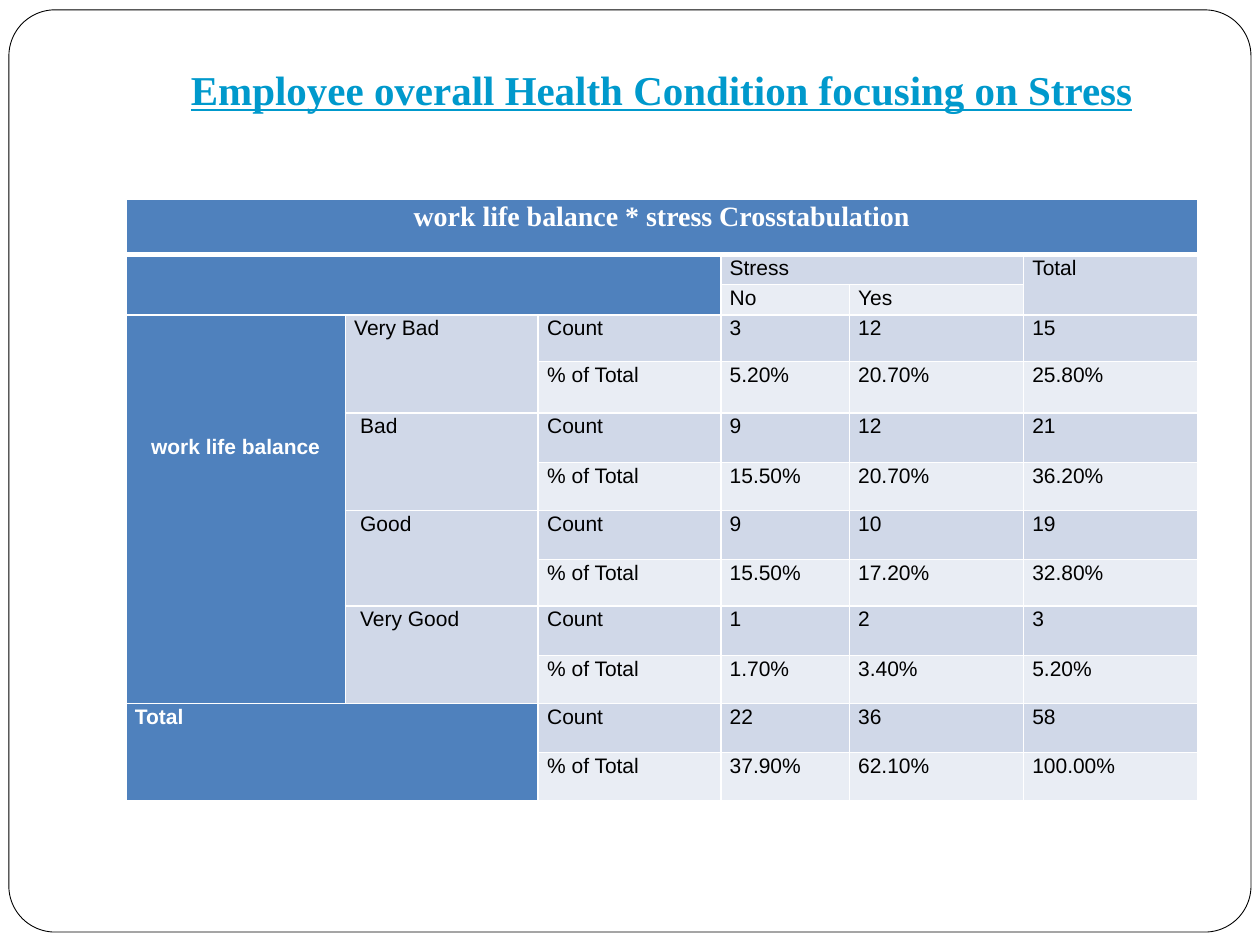
from lxml import etree
from pptx import Presentation
from pptx.dml.color import RGBColor
from pptx.enum.shapes import MSO_SHAPE
from pptx.enum.text import MSO_ANCHOR, MSO_AUTO_SIZE, PP_ALIGN
from pptx.oxml.ns import qn
from pptx.util import Cm, Pt

ROUND = MSO_SHAPE.ROUNDED_RECTANGLE
BOTTOM = MSO_ANCHOR.BOTTOM
NO_FIT = MSO_AUTO_SIZE.NONE
CENTER, JUSTIFY = PP_ALIGN.CENTER, PP_ALIGN.JUSTIFY

COLORS = {"title": "0099CC", "head": "4F81BD", "dark": "D0D8E8",
          "light": "E9EDF4", "white": "FFFFFF", "black": "000000"}
SERIF, SANS = "Times New Roman", "Arial"

WIDTHS = [4.42, 3.89, 3.68, 2.59, 3.51, 3.51]
HEIGHTS = [1.12, 0.61, 0.61, 0.94, 1.04, 0.99, 0.97,
           0.99, 0.94, 0.99, 0.97, 0.99, 0.97]

# Each group: label, counts, shares (No, Yes, Total)
GROUPS = [
    ("Very Bad", ["3", "12", "15"], ["5.20%", "20.70%", "25.80%"]),
    ("Bad", ["9", "12", "21"], ["15.50%", "20.70%", "36.20%"]),
    ("Good", ["9", "10", "19"], ["15.50%", "17.20%", "32.80%"]),
    ("Very Good", ["1", "2", "3"], ["1.70%", "3.40%", "5.20%"]),
    ("Total", ["22", "36", "58"], ["37.90%", "62.10%", "100.00%"]),
]


def color(name):
    return RGBColor.from_string(COLORS[name])


class Deck:
    """Holds the style and the current slide."""

    def __init__(self):
        self.prs = Presentation()
        self.prs.slide_width, self.prs.slide_height = Cm(25.4), Cm(19.05)
        self.slide = self.prs.slides.add_slide(self.prs.slide_layouts[5])

    def style(self, para, size, font, tint, bold=False, line=False):
        for run in para.runs:
            run.font.size, run.font.name = Pt(size), font
            run.font.bold, run.font.underline = bold, line
            run.font.color.rgb = color(tint)

    def frame(self, left, top, width, height):
        """Draw the rounded page border behind the title."""
        box = self.slide.shapes.add_shape(
            ROUND, Cm(left), Cm(top), Cm(width), Cm(height))
        box.adjustments[0] = 0.05
        box.shadow.inherit = False
        box.fill.solid()
        box.fill.fore_color.rgb = color("white")
        box.line.color.rgb = color("black")
        box.line.width = Pt(0.5)
        self.slide.shapes.title.element.addprevious(box.element)

    def title(self, text, left, top, width, height):
        box = self.slide.shapes.title
        box.left, box.top = Cm(left), Cm(top)
        box.width, box.height = Cm(width), Cm(height)
        body = box.text_frame
        body.text = text
        body.auto_size, body.vertical_anchor = NO_FIT, BOTTOM
        body.margin_bottom = Cm(0.25)
        para = body.paragraphs[0]
        para.alignment = CENTER
        self.style(para, 23.4, SERIF, "title", bold=True, line=True)

    def grid(self, left, top):
        """Add a table with white rules and banded rows."""
        table = self.slide.shapes.add_table(
            len(HEIGHTS), len(WIDTHS), Cm(left), Cm(top),
            Cm(sum(WIDTHS)), Cm(sum(HEIGHTS))).table
        table.first_row = table.horz_banding = False
        for col, width in zip(table.columns, WIDTHS):
            col.width = Cm(width)
        for i, (row, height) in enumerate(zip(table.rows, HEIGHTS)):
            row.height = Cm(height)
            for cell in row.cells:
                self.fill(cell, "dark" if i % 2 else "light")
                self.rules(cell, top=3 if i == 1 else 1,
                           base=3 if i == 0 else 1)
        return table

    def fill(self, cell, tint):
        cell.fill.solid()
        cell.fill.fore_color.rgb = color(tint)

    def rules(self, cell, top, base):
        props = cell._tc.get_or_add_tcPr()
        sides = [("a:lnL", 1), ("a:lnR", 1), ("a:lnT", top), ("a:lnB", base)]
        for i, (tag, width) in enumerate(sides):
            line = etree.Element(qn(tag), w=str(Pt(width)))
            solid = etree.SubElement(line, qn("a:solidFill"))
            etree.SubElement(solid, qn("a:srgbClr"), val=COLORS["white"])
            props.insert(i, line)

    def cell(self, table, row, col, text, span=(1, 1), head=False,
             align=JUSTIFY, size=12, font=SANS, left=0.18, top=0):
        cell = table.cell(row, col)
        if span != (1, 1):
            cell.merge(table.cell(row + span[0] - 1, col + span[1] - 1))
        cell.margin_left, cell.margin_right = Cm(left), Cm(0.18)
        cell.margin_top, cell.margin_bottom = Cm(top), 0
        if head:
            self.fill(cell, "head")
        cell.text_frame.text = text
        para = cell.text_frame.paragraphs[0]
        para.alignment = align
        para.line_spacing, para.space_after = 1.07, Pt(8)
        self.style(para, size, font, "white" if head else "black", head)


def main():
    deck = Deck()
    deck.frame(0.18, 0.2, 25.04, 18.59)
    deck.title("Employee overall Health Condition focusing on Stress",
               2.54, 0.76, 21.59, 1.78)

    table = deck.grid(2.54, 4.01)
    deck.cell(table, 0, 0, "work life balance * stress Crosstabulation",
              (1, 6), head=True, align=CENTER, size=16, font=SERIF)
    deck.cell(table, 1, 0, "", (2, 3), head=True)
    deck.cell(table, 1, 3, "Stress", (1, 2))
    deck.cell(table, 1, 5, "Total", (2, 1))
    deck.cell(table, 2, 3, "No")
    deck.cell(table, 2, 4, "Yes")
    deck.cell(table, 3, 0, "work life balance", (8, 1), head=True,
              align=CENTER, top=2.4)

    for i, (label, counts, shares) in enumerate(GROUPS):
        row = 3 + 2 * i
        if label == "Total":
            deck.cell(table, row, 0, label, (2, 2), head=True)
        else:
            deck.cell(table, row, 1, label, (2, 1), left=0.3 if i else 0.18)
        for j, line in enumerate([["Count"] + counts,
                                  ["% of Total"] + shares]):
            for k, text in enumerate(line):
                deck.cell(table, row + j, 2 + k, text)

    deck.prs.save("out.pptx")


if __name__ == "__main__":
    main()
